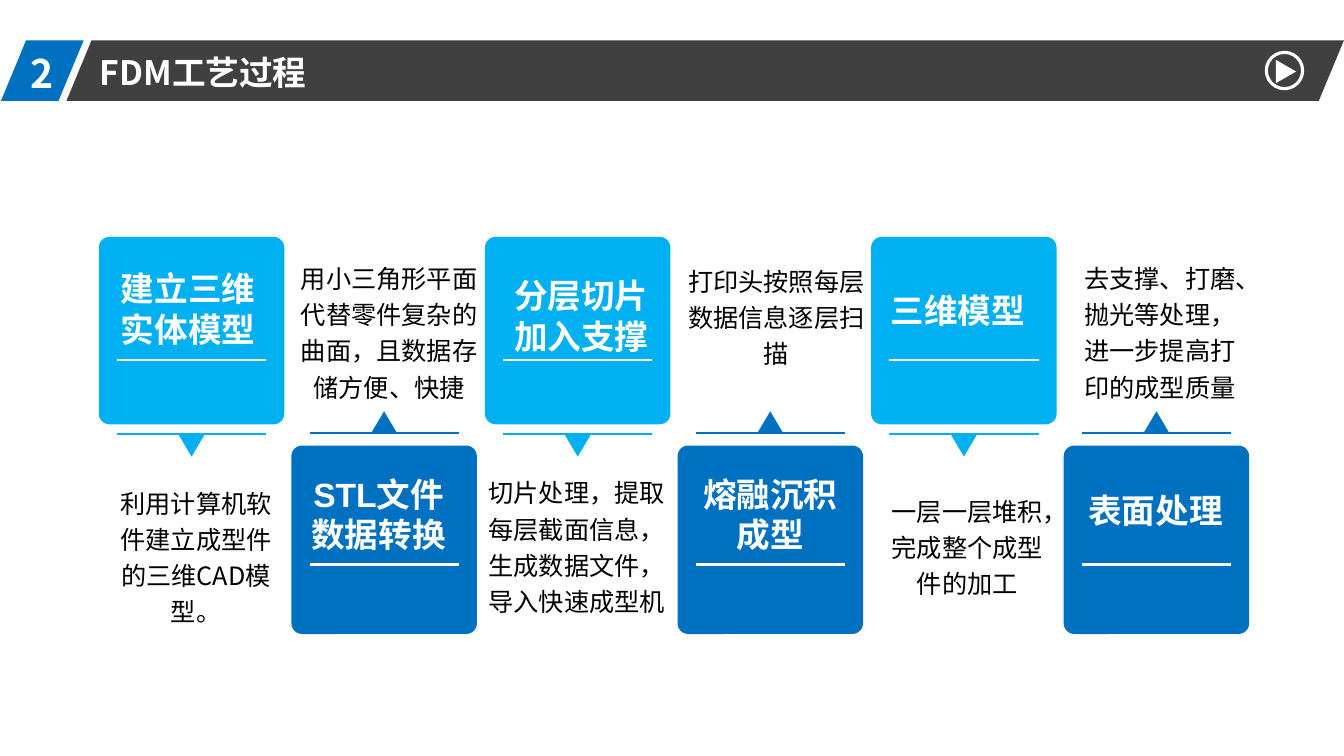
from lxml import etree
from pptx import Presentation
from pptx.dml.color import RGBColor
from pptx.enum import shapes, text
from pptx.oxml import ns
from pptx.util import Pt

PX = 9144
SKY = RGBColor(0x00, 0xB0, 0xF0)
BLUE = RGBColor(0x00, 0x70, 0xC0)
GREY = RGBColor(0x40, 0x40, 0x40)
WHITE = RGBColor(0xFF, 0xFF, 0xFF)
BLACK = RGBColor(0x00, 0x00, 0x00)
SANS = "Noto Sans CJK SC"
KIND = shapes.MSO_SHAPE

TITLE = "FDM工艺过程"
NUMBER = "2"
STEPS = [
    ("建立三维实体模型", (116, 266, 141, 81),
     "利用计算机软件建立成型件的三维CAD模型。", (116, 478, 157, 145)),
    ("STL文件数据转换", (300, 470, 151, 81),
     "用小三角形平面代替零件复杂的曲面，且数据存储方便、快捷", (293, 255, 186, 145)),
    ("分层切片 加入支撑", (503, 273, 147, 81),
     "切片处理，提取每层截面信息，生成数据文件，导入快速成型机", (480, 468, 184, 145)),
    ("熔融沉积成型", (690, 470, 148, 81),
     "打印头按照每层数据信息逐层扫描", (673, 258, 194, 109)),
    ("三维模型", (871, 288, 158, 40),
     "一层一层堆积，完成整个成型件的加工", (881, 486, 157, 109)),
    ("表面处理", (1079, 486, 134, 40),
     "去支撑、打磨、抛光等处理，进一步提高打印的成型质量", (1072, 255, 157, 142)),
]
UPPER = {"color": SKY, "card": 235, "height": 186, "rule": 357,
         "edge": 431, "pointer": 431, "turn": 180}
LOWER = {"color": BLUE, "card": 442, "height": 187, "rule": 560,
         "edge": 430, "pointer": 408, "turn": 0}
FIRST_LEFT, PITCH = 98, 191.4

HEADING = {"size": Pt(24), "name": "Arial", "bold": True}
BODY = {"size": Pt(18), "name": SANS, "bold": False}
BANNER = {"size": Pt(24), "name": SANS, "bold": True}
BADGE = {"size": Pt(28), "name": SANS, "bold": True}
CENTER, LEFT = text.PP_ALIGN.CENTER, text.PP_ALIGN.LEFT


def emu(*lengths):
    return [length * PX for length in lengths]


def add_block(page, kind, area, fill=None, adjust=None, turn=0):
    block = page.shapes.add_shape(kind, *emu(*area))
    block.shadow.inherit = False
    block.rotation = turn
    if adjust is not None:
        block.adjustments[0] = adjust
    if fill is None:
        block.fill.background()
    else:
        block.fill.solid()
        block.fill.fore_color.rgb = fill
        block.line.fill.background()
    return block


def add_rule(page, left, top, color):
    rule = page.shapes.add_connector(
        shapes.MSO_CONNECTOR.STRAIGHT, *emu(left, top, left + 148, top))
    rule.line.color.rgb = color
    rule.line.width = Pt(1.5)
    etree.SubElement(rule.element.spPr, ns.qn("a:effectLst"))


def write(box, words, style, color, align=LEFT, spacing=1.0, insets=(0, 0)):
    frame = box.text_frame
    side, top = emu(*insets)
    settings = {"word_wrap": True, "auto_size": text.MSO_AUTO_SIZE.NONE,
                "vertical_anchor": text.MSO_ANCHOR.TOP,
                "margin_left": side, "margin_right": side,
                "margin_top": top, "margin_bottom": top}
    for name, value in settings.items():
        setattr(frame, name, value)
    para = frame.paragraphs[0]
    para.alignment = align
    para.line_spacing = spacing
    para.space_before = Pt(0)
    span = para.add_run()
    span.text = words
    for name, value in style.items():
        setattr(span.font, name, value)
    span.font.color.rgb = color
    east_asian = etree.SubElement(span.font.element if hasattr(span.font, "element")
                                  else span._r.get_or_add_rPr(), ns.qn("a:ea"))
    east_asian.set("typeface", SANS)


def add_text(page, area, *args, **options):
    write(page.shapes.add_textbox(*emu(*area)), *args, **options)


def add_header(page):
    add_block(page, KIND.PARALLELOGRAM, (66, 40, 1267, 60), GREY, 0.415)
    add_block(page, KIND.PARALLELOGRAM, (1, 40, 82, 60), BLUE, 0.415)
    add_text(page, (20, 44, 69, 57), NUMBER, BADGE, WHITE, insets=(10, 5))
    title = page.shapes.title
    title.element.getparent().append(title.element)
    title.left, title.top, title.width, title.height = emu(89, 46, 274, 51)
    write(title, TITLE, BANNER, WHITE, insets=(10, 5))
    ring = add_block(page, KIND.OVAL, (1256, 52, 36, 36))
    ring.line.color.rgb = WHITE
    ring.line.width = Pt(2.25)
    add_block(page, KIND.ISOSCELES_TRIANGLE, (1264, 61, 23, 20), WHITE, turn=90)


def add_step(page, index, step):
    heading, heading_area, body, body_area = step
    row = LOWER if index % 2 else UPPER
    left = FIRST_LEFT + round(index * PITCH)
    color = row["color"]
    add_block(page, KIND.ROUNDED_RECTANGLE,
              (left, row["card"], 184, row["height"]), color, 0.058)
    add_rule(page, left + 18, row["rule"], WHITE)
    add_rule(page, left + 18, row["edge"], color)
    add_block(page, KIND.ISOSCELES_TRIANGLE,
              (left + 79, row["pointer"], 26, 22), color, turn=row["turn"])
    add_text(page, heading_area, heading, HEADING, WHITE, CENTER)
    add_text(page, body_area, body, BODY, BLACK, CENTER, 1.2)


def main():
    deck = Presentation()
    deck.slide_width, deck.slide_height = emu(1333, 750)
    page = deck.slides.add_slide(deck.slide_layouts[5])
    add_header(page)
    for index, step in enumerate(STEPS):
        add_step(page, index, step)
    deck.save("out.pptx")


if __name__ == "__main__":
    main()
